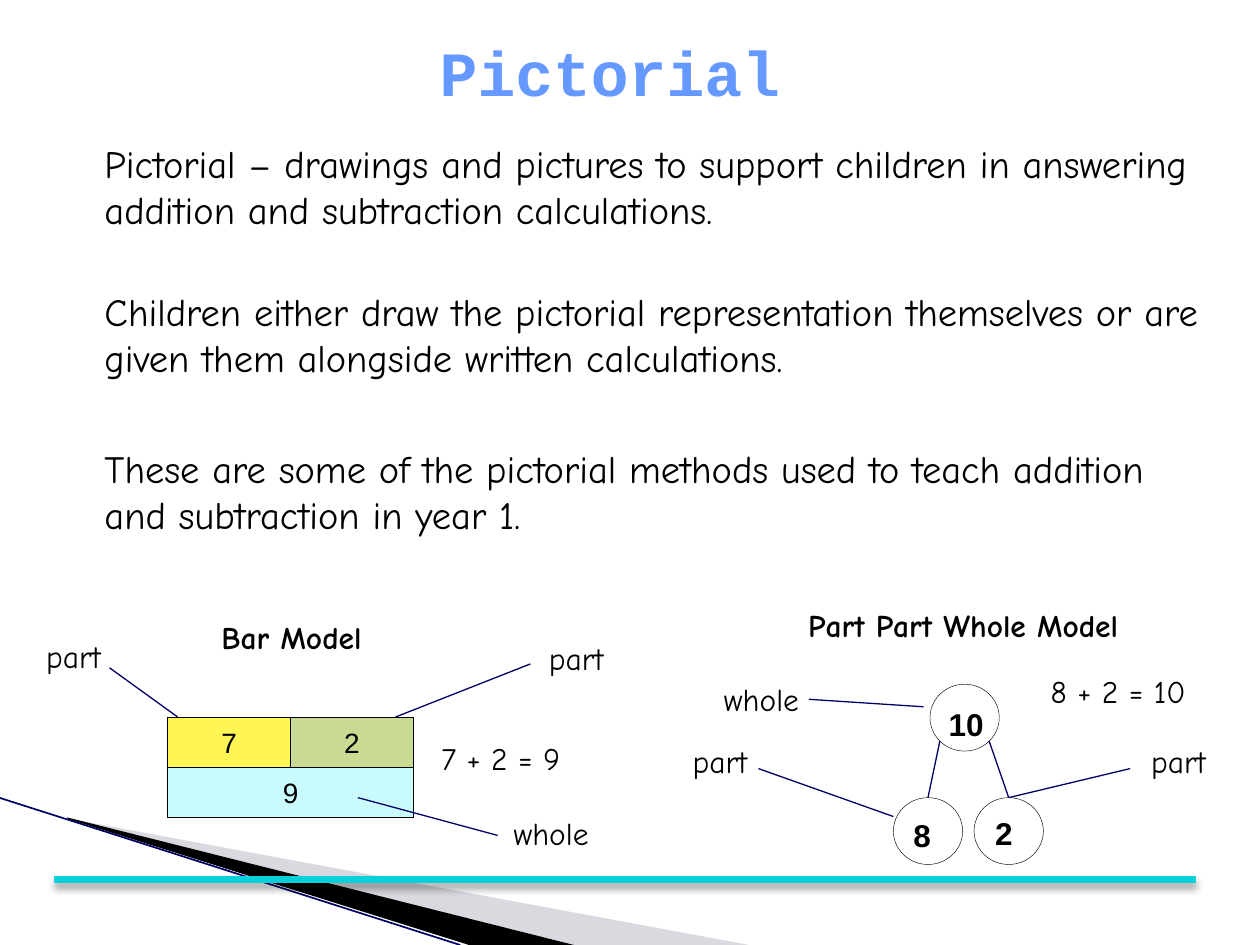
"""Build the Pictorial slide on bar models and part part whole models."""
import pptx
import pptx.dml.color
import pptx.enum.shapes
import pptx.enum.text
import pptx.oxml
import pptx.oxml.ns
import pptx.util
import lxml.etree

Pt = pptx.util.Pt
ALIGN = pptx.enum.text.PP_ALIGN
SHAPE = pptx.enum.shapes.MSO_SHAPE
ANCHOR = pptx.enum.text.MSO_ANCHOR
qn = pptx.oxml.ns.qn
RGB = pptx.dml.color.RGBColor.from_string
COLORS = {
    "title": "6699FF", "ink": "000000", "line": "000066", "rule": "0BD0D9",
    "grey": "A0A0B2", "yellow": "FFF655", "green": "C9DA92", "cyan": "C9FAFC",
}


def write_text(frame, texts, font="Comic Neue", size=18, color="ink", bold=False,
               align=ALIGN.CENTER, anchor=ANCHOR.TOP, gaps=(0,), spacing=None):
    frame.word_wrap = True
    frame.vertical_anchor = anchor
    for index, text in enumerate(texts):
        para = frame.paragraphs[0] if index == 0 else frame.add_paragraph()
        para.alignment = align
        para.line_spacing = spacing
        if gaps[index]:
            para.space_before = Pt(gaps[index])
        span = para.add_run()
        span.text = text
        span.font.name = font
        span.font.size = Pt(size)
        span.font.bold = bold
        span.font.color.rgb = RGB(COLORS[color])


def add_line(x1, y1, x2, y2, color="line", width=0.75):
    line = page.shapes.add_connector(
        pptx.enum.shapes.MSO_CONNECTOR.STRAIGHT, Pt(x1), Pt(y1), Pt(x2), Pt(y2))
    line.line.color.rgb = RGB(COLORS[color])
    line.line.width = Pt(width)
    effects = lxml.etree.SubElement(line._element.spPr, qn("a:effectLst"))
    return line, effects


deck = pptx.Presentation()
deck.slide_width, deck.slide_height = Pt(720), Pt(540)
page = deck.slides.add_slide(deck.slide_layouts[6])

swooshes = [
    ("grey", [(39.6, 468.5), (428, 540), (328, 540), (39.6, 468)]),
    ("ink", [(38.2, 467.3), (328, 540), (268, 540), (38.9, 468)]),
]
for color, points in swooshes:
    builder = page.shapes.build_freeform(*points[0], scale=float(Pt(1)))
    builder.add_line_segments(points[1:], close=True)
    swoosh = builder.convert_to_shape()
    swoosh.shadow.inherit = False
    swoosh.fill.solid()
    swoosh.fill.fore_color.rgb = RGB(COLORS[color])
    swoosh.line.fill.background()
    if color == "grey":
        shade = swoosh._element.spPr.find(".//" + qn("a:srgbClr"))
        lxml.etree.SubElement(shade, qn("a:alpha"), val="40000")

add_line(0, 456, 263, 540, width=0.95)
rule, effects = add_line(31, 502.6, 683.3, 502.6, color="rule", width=4.33)
effects.append(pptx.oxml.parse_xml(
    '<a:outerShdw xmlns:a="http://schemas.openxmlformats.org/drawingml/2006/main" '
    'blurRad="50800" dist="38100" dir="5400000" rotWithShape="0">'
    '<a:srgbClr val="000000"><a:alpha val="35000"/></a:srgbClr></a:outerShdw>'))

title = page.shapes.add_textbox(Pt(53.3), Pt(8.6), Pt(590.4), Pt(64.8))
write_text(title.text_frame, ["Pictorial"], font="Courier New", size=36,
           color="title", bold=True, anchor=ANCHOR.MIDDLE)

body = page.shapes.add_textbox(Pt(52.6), Pt(76.3), Pt(643.6), Pt(240))
write_text(body.text_frame, [
    "Pictorial – drawings and pictures to support children in answering "
    "addition and subtraction calculations.",
    "Children either draw the pictorial representation themselves or are "
    "given them alongside written calculations.",
    "These are some of the pictorial methods used to teach addition and "
    "subtraction in year 1.",
], size=22, align=ALIGN.LEFT, gaps=(0, 32, 37))

table = page.shapes.add_table(2, 2, Pt(95.8), Pt(409.7), Pt(140.4), Pt(57.6)).table
table.first_row = table.horz_banding = False
table.cell(1, 0).merge(table.cell(1, 1))
bars = [(0, 0, "7", "yellow"), (0, 1, "2", "green"), (1, 0, "9", "cyan"), (1, 1, "", "cyan")]
for row, column, number, color in bars:
    cell = table.cell(row, column)
    cell.margin_left = cell.margin_right = cell.margin_top = cell.margin_bottom = Pt(2.9)
    if number:
        write_text(cell.text_frame, [number], font="Arial", size=16, spacing=1.19)
    properties = cell._tc.get_or_add_tcPr()
    for side in ("lnL", "lnR", "lnT", "lnB"):
        border = lxml.etree.SubElement(properties, qn("a:" + side), w=str(Pt(0.5)))
        paint = lxml.etree.SubElement(border, qn("a:solidFill"))
        lxml.etree.SubElement(paint, qn("a:srgbClr"), val=COLORS["ink"])
    cell.fill.solid()
    cell.fill.fore_color.rgb = RGB(COLORS[color])

circles = {}
for name, left, top in [("whole", 531.4, 391), ("left part", 510.5, 455.8),
                        ("right part", 556.6, 455.8)]:
    circle = page.shapes.add_shape(SHAPE.OVAL, Pt(left), Pt(top), Pt(39.6), Pt(38.2))
    circle.shadow.inherit = False
    circle.fill.background()
    circle.line.color.rgb = RGB(COLORS["ink"])
    circle.line.width = Pt(0.25)
    circles[name] = circle

for x1, y1, x2, y2, target in [
    (537.1, 423.4, 530.6, 455.8, "left part"),
    (565.2, 423.4, 576.7, 455.8, "right part"),
    (645.8, 439.2, 576.7, 455.8, "right part"),
    (226.1, 409.7, 303.1, 379.4, None),
    (101.5, 409.7, 62.6, 381.6, None),
    (204.5, 455.8, 284.4, 477.4, None),
    (510.5, 466.6, 433.4, 439.2, None),
    (527.8, 403.9, 462.2, 399.6, None),
]:
    line, effects = add_line(x1, y1, x2, y2)
    if target:
        line.end_connect(circles[target], 0)

for text, left, top in [("10", 535, 399.6), ("8", 514.8, 463), ("2", 561.6, 461.5)]:
    box = page.shapes.add_textbox(Pt(left), Pt(top), Pt(40.3), Pt(28.8))
    write_text(box.text_frame, [text], font="Arial", bold=True, align=ALIGN.LEFT)

for text, left, top, width, bold in [
    ("Bar Model", 106.6, 349.9, 120, True),
    ("Part Part Whole Model", 422.6, 342.7, 255.6, True),
    ("7 + 2 = 9", 226.1, 419, 120, False),
    ("8 + 2 = 10", 578.9, 380.2, 120, False),
    ("part", 269.3, 361.4, 120, False),
    ("part", -18, 360.7, 120, False),
    ("whole", 254.9, 461.5, 120, False),
    ("part", 351.4, 420.5, 120, False),
    ("part", 613.4, 420.5, 120, False),
    ("whole", 375.1, 385.2, 120, False),
]:
    box = page.shapes.add_textbox(Pt(left), Pt(top), Pt(width), Pt(28.8))
    write_text(box.text_frame, [text], bold=bold)

deck.save("out.pptx")
